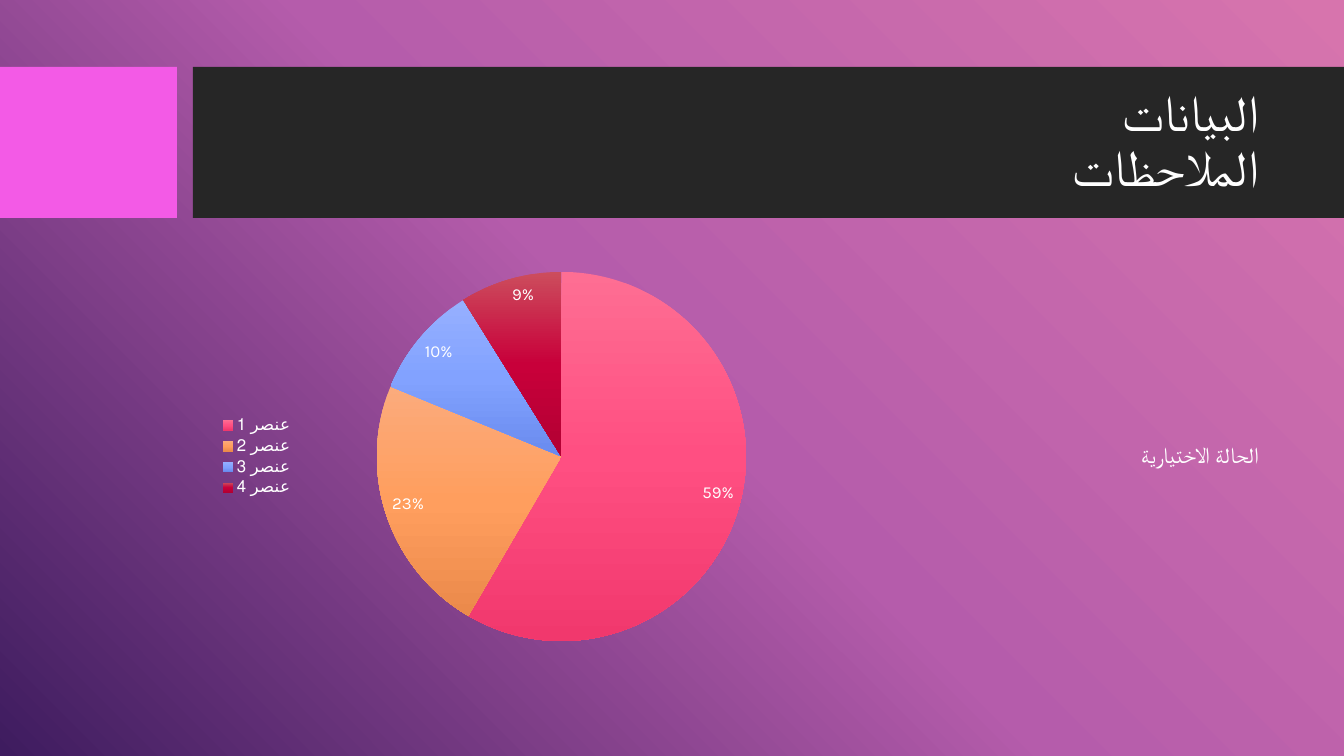
from lxml import etree
from pptx import Presentation
from pptx import util as u
from pptx.chart.data import CategoryChartData
from pptx.dml.color import RGBColor
from pptx.enum import chart as ch, shapes, text
from pptx.oxml.ns import qn

# Content
TITLE = "البيانات\vالملاحظات"
BODY = "الحالة الاختيارية"
ITEMS = [("عنصر 1", 59), ("عنصر 2", 23), ("عنصر 3", 10), ("عنصر 4", 9)]


class Theme:
    font = "Karla"
    text = "FFFFFF"
    band, accent = "262626", "F35AE6"
    title_pt, body_pt, chart_pt = 36, 16, 12
    background = ("D774AD", "B55CAB", "3E1C5F")
    slices = [
        ("FE6E93", "FF4F82", "F1386D"),
        ("FBAB7C", "FF9E5E", "EB8A4B"),
        ("96B0FF", "82A2FF", "698BEE"),
        ("CC4D5D", "C8003A", "B20033"),
    ]


# Layout in px
SLIDE_W, SLIDE_H = 1344, 756
BAND_Y, BAND_H = 67, 151
ACCENT_W, BAND_X = 177, 193
TITLE_BOX = (210, 83, 1059, 119)
CHART_BOX = (209, 258, 618, 397)
BODY_BOX = (851, 258, 418, 397)
EMU_PER_PX = 914400 / 100.8


def px(*lengths):
    return [u.Emu(round(n * EMU_PER_PX)) for n in lengths]


def style_font(font, size):
    font.name = Theme.font
    font.size = u.Pt(size)
    font.color.rgb = RGBColor.from_string(Theme.text)


def fill_gradient(fill, colors, clockwise):
    """Spread the colours evenly along a linear gradient."""
    fill.gradient()
    fill.gradient_angle = 360 - clockwise
    stops = fill._xPr.find(qn("a:gradFill")).find(qn("a:gsLst"))
    for old in list(stops):
        stops.remove(old)
    for i, color in enumerate(colors):
        pos = str(100000 * i // (len(colors) - 1))
        gs = etree.SubElement(stops, qn("a:gs"), pos=pos)
        etree.SubElement(gs, qn("a:srgbClr"), val=color)


def add_bar(slide, x, w, color):
    sp = slide.shapes.add_shape(shapes.MSO_SHAPE.RECTANGLE, *px(x, BAND_Y, w, BAND_H))
    sp.shadow.inherit = False
    sp.fill.solid()
    sp.fill.fore_color.rgb = RGBColor.from_string(color)
    sp.line.fill.background()


def add_rtl_text(slide, box, content, size):
    tf = slide.shapes.add_textbox(*px(*box)).text_frame
    tf.word_wrap = True
    tf.vertical_anchor = text.MSO_ANCHOR.MIDDLE
    p = tf.paragraphs[0]
    p.text = content
    p.alignment = text.PP_ALIGN.RIGHT
    p.line_spacing = 0.9
    p._p.get_or_add_pPr().set("rtl", "1")
    for r in p.runs:
        style_font(r.font, size)


def add_pie(slide):
    data = CategoryChartData()
    data.categories = [name for name, _ in ITEMS]
    data.add_series("Series 1", [value for _, value in ITEMS])
    chart = slide.shapes.add_chart(ch.XL_CHART_TYPE.PIE, *px(*CHART_BOX), data).chart
    chart.has_title = False
    style_font(chart.font, Theme.chart_pt)

    chart.has_legend = True
    chart.legend.position = ch.XL_LEGEND_POSITION.LEFT
    chart.legend.include_in_layout = False
    style_font(chart.legend.font, Theme.chart_pt)

    plot = chart.plots[0]
    plot.vary_by_categories = True
    for i, colors in enumerate(Theme.slices):
        fmt = plot.series[0].points[i].format
        fill_gradient(fmt.fill, colors, 90)
        fmt.line.fill.background()

    # Values are whole percentages already
    plot.has_data_labels = True
    labels = plot.data_labels
    labels.show_value = True
    labels.show_percentage = False
    labels.number_format = '0"%"'
    labels.number_format_is_linked = False
    labels.position = ch.XL_LABEL_POSITION.INSIDE_END
    style_font(labels.font, Theme.chart_pt)


def main():
    prs = Presentation()
    prs.slide_width, prs.slide_height = px(SLIDE_W, SLIDE_H)
    slide = prs.slides.add_slide(prs.slide_layouts[6])
    fill_gradient(slide.background.fill, Theme.background, 135)

    # Title band
    add_bar(slide, BAND_X, SLIDE_W - BAND_X, Theme.band)
    add_bar(slide, 0, ACCENT_W, Theme.accent)
    add_rtl_text(slide, TITLE_BOX, TITLE, Theme.title_pt)

    # Chart and caption
    add_pie(slide)
    add_rtl_text(slide, BODY_BOX, BODY, Theme.body_pt)
    prs.save("out.pptx")


if __name__ == "__main__":
    main()
